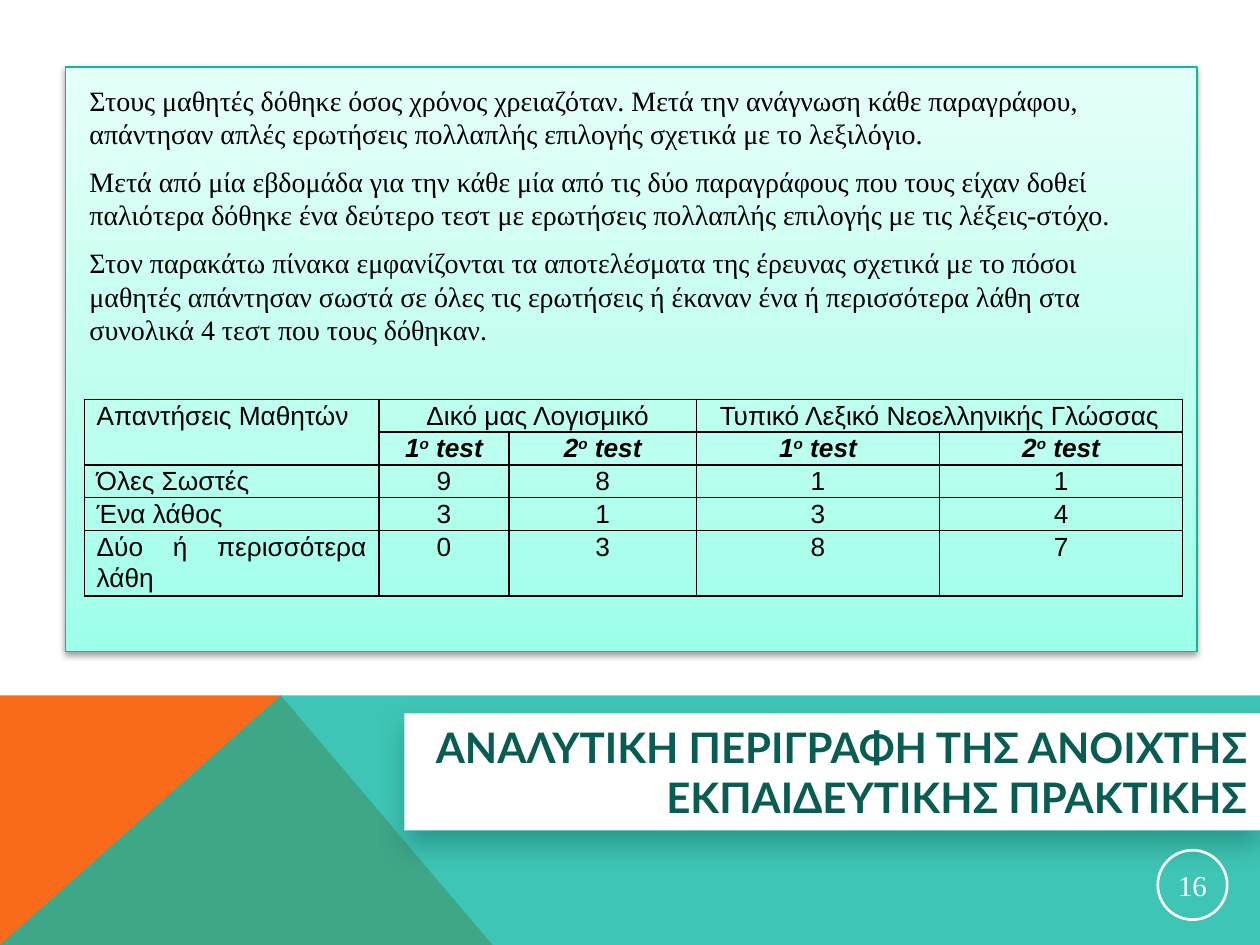
from lxml.etree import SubElement
from pptx import Presentation
from pptx.dml.color import RGBColor
from pptx.enum.shapes import MSO_SHAPE
from pptx.enum.text import MSO_ANCHOR, MSO_AUTO_SIZE, PP_ALIGN
from pptx.oxml.ns import qn
from pptx.util import Cm, Pt

WHITE = RGBColor(0xFF, 0xFF, 0xFF)
BLACK = RGBColor(0, 0, 0)
ORANGE = RGBColor(0xF9, 0x6A, 0x1B)
TEAL = RGBColor(0x10, 0xB7, 0xA3)
PANEL_EDGE = RGBColor(0x0C, 0xB7, 0xA3)
DARK_TEAL = RGBColor(0x08, 0x5C, 0x52)
PANEL_STOPS = [
    (0, RGBColor(0x9D, 0xFF, 0xEA)),
    (35, RGBColor(0xBA, 0xFF, 0xEF)),
    (100, RGBColor(0xE5, 0xFF, 0xF9)),
]

HEADING = "ΑΝΑΛΥΤΙΚΗ ΠΕΡΙΓΡΑΦΗ ΤΗΣ ΑΝΟΙΧΤΗΣ ΕΚΠΑΙΔΕΥΤΙΚΗΣ ΠΡΑΚΤΙΚΗΣ"
PAGE_NUMBER = "16"
PROCEDURE = [
    "Στους μαθητές δόθηκε όσος χρόνος χρειαζόταν. Μετά την ανάγνωση κάθε παραγράφου, "
    "απάντησαν απλές ερωτήσεις πολλαπλής επιλογής σχετικά με το λεξιλόγιο.",
    "Μετά από μία εβδομάδα για την κάθε μία από τις δύο παραγράφους που τους είχαν δοθεί "
    "παλιότερα δόθηκε ένα δεύτερο τεστ με ερωτήσεις πολλαπλής επιλογής με τις λέξεις-στόχο.",
    "Στον παρακάτω πίνακα εμφανίζονται τα αποτελέσματα της έρευνας σχετικά με το πόσοι "
    "μαθητές απάντησαν σωστά σε όλες τις ερωτήσεις ή έκαναν ένα ή περισσότερα λάθη στα "
    "συνολικά 4 τεστ που τους δόθηκαν.",
]
TEST_ROW = 1
RESULTS = [
    ["Απαντήσεις Μαθητών", "Δικό μας Λογισμικό", "", "Τυπικό Λεξικό Νεοελληνικής Γλώσσας", ""],
    ["", "1", "2", "1", "2"],
    ["Όλες Σωστές", "9", "8", "1", "1"],
    ["Ένα λάθος", "3", "1", "3", "4"],
    ["Δύο ή περισσότερα λάθη", "0", "3", "8", "7"],
]
MERGES = [((0, 0), (1, 0)), ((0, 1), (0, 2)), ((0, 3), (0, 4))]
COLUMN_WIDTHS = [5.94, 2.62, 3.78, 4.9, 4.9]
ROW_HEIGHTS = [0.66, 0.66, 0.66, 0.66, 1.32]

WIDTH, HEIGHT = 25.4, 19.05
BAND_TOP, PEAK = 14.02, 5.66
BAND_SHAPES = [
    (ORANGE, 100, [(0, HEIGHT), (0, BAND_TOP), (PEAK, BAND_TOP), (9.93, HEIGHT)]),
    (TEAL, 80, [(0, HEIGHT), (PEAK, BAND_TOP), (WIDTH, BAND_TOP), (WIDTH, HEIGHT)]),
]


def add_color(parent, color, alpha=100):
    srgb = SubElement(parent, qn("a:srgbClr"), val=str(color))
    if alpha < 100:
        SubElement(srgb, qn("a:alpha"), val=str(alpha * 1000))


def cast_shadow(shape, color, alpha, blur, distance):
    shape.shadow.inherit = False
    effects = shape._element.spPr.find(qn("a:effectLst"))
    outer = SubElement(effects, qn("a:outerShdw"), blurRad=str(Pt(blur)),
                       dist=str(Pt(distance)), dir="5400000", rotWithShape="0")
    add_color(outer, color, alpha)


def place(shape, left, top, width, height):
    shape.left, shape.top = Cm(left), Cm(top)
    shape.width, shape.height = Cm(width), Cm(height)


def style_font(paragraph, name, size, color):
    paragraph.font.name = name
    paragraph.font.size = Pt(size)
    paragraph.font.color.rgb = color


def add_band(slide):
    for color, alpha, corners in BAND_SHAPES:
        points = [(Cm(x), Cm(y)) for x, y in corners]
        builder = slide.shapes.build_freeform(*points[0])
        builder.add_line_segments(points[1:], close=True)
        band = builder.convert_to_shape()
        band.shadow.inherit = False
        band.fill.solid()
        band.fill.fore_color.rgb = color
        band.line.fill.background()
        if alpha < 100:
            srgb = band._element.spPr.find(qn("a:solidFill")).find(qn("a:srgbClr"))
            SubElement(srgb, qn("a:alpha"), val=str(alpha * 1000))


def add_panel(slide):
    panel = slide.shapes.add_shape(MSO_SHAPE.RECTANGLE, Cm(1.32), Cm(1.35), Cm(22.81), Cm(11.79))
    panel.fill.gradient()
    panel.fill.gradient_angle = 90
    stops = panel._element.spPr.find(qn("a:gradFill")).find(qn("a:gsLst"))
    for stop in list(stops):
        stops.remove(stop)
    for position, color in PANEL_STOPS:
        add_color(SubElement(stops, qn("a:gs"), pos=str(position * 1000)), color)
    panel.line.color.rgb = PANEL_EDGE
    panel.line.width = Pt(0.75)
    cast_shadow(panel, BLACK, 38, 3.1, 1.6)


def fill_heading(heading):
    place(heading, 8.15, 14.38, 17.25, 2.36)
    heading.fill.solid()
    heading.fill.fore_color.rgb = WHITE
    cast_shadow(heading, DARK_TEAL, 40, 16, 8)
    frame = heading.text_frame
    frame.text = HEADING
    frame.word_wrap = True
    frame.auto_size = MSO_AUTO_SIZE.NONE
    frame.vertical_anchor = MSO_ANCHOR.MIDDLE
    paragraph = frame.paragraphs[0]
    paragraph.alignment = PP_ALIGN.RIGHT
    style_font(paragraph, "Lato", 24, DARK_TEAL)
    paragraph.font.bold = True


def fill_procedure(procedure):
    place(procedure, 1.55, 1.55, 22.3, 11.48)
    frame = procedure.text_frame
    frame.text = "\n".join(PROCEDURE)
    frame.word_wrap = True
    frame.auto_size = MSO_AUTO_SIZE.NONE
    frame.vertical_anchor = MSO_ANCHOR.TOP
    for index, paragraph in enumerate(frame.paragraphs):
        properties = paragraph._p.get_or_add_pPr()
        properties.set("marL", "0")
        properties.set("indent", "0")
        SubElement(properties, qn("a:buNone"))
        paragraph.space_before = Pt(8 if index else 0)
        style_font(paragraph, "Times New Roman", 16, BLACK)


def add_page_number(slide):
    badge = slide.shapes.add_shape(MSO_SHAPE.OVAL, Cm(23.34), Cm(17.14), Cm(1.4), Cm(1.4))
    badge.shadow.inherit = False
    badge.fill.background()
    badge.line.color.rgb = WHITE
    badge.line.width = Pt(1.5)
    frame = badge.text_frame
    frame.margin_left = frame.margin_right = frame.margin_top = frame.margin_bottom = Cm(0.03)
    frame.vertical_anchor = MSO_ANCHOR.MIDDLE
    frame.text = PAGE_NUMBER
    frame.paragraphs[0].alignment = PP_ALIGN.CENTER
    style_font(frame.paragraphs[0], "Times New Roman", 16.5, WHITE)


def fill_cell(cell, text, row, column):
    cell.margin_left = cell.margin_right = Cm(0.25)
    cell.margin_top = cell.margin_bottom = 0
    for side in ("lnL", "lnR", "lnT", "lnB"):
        border = SubElement(cell._tc.get_or_add_tcPr(), qn(f"a:{side}"), w=str(Pt(1)))
        add_color(SubElement(border, qn("a:solidFill")), BLACK)
    cell.fill.background()
    paragraph = cell.text_frame.paragraphs[0]
    paragraph.alignment = PP_ALIGN.CENTER if column else PP_ALIGN.JUSTIFY
    paragraph.line_spacing = 1.07
    style_font(paragraph, "Arial", 15, BLACK)
    if text:
        paragraph.add_run().text = text
    if text and row == TEST_ROW:
        ordinal = paragraph.add_run()
        ordinal.text = "ο"
        ordinal.font._element.set("baseline", "30000")
        paragraph.add_run().text = " test"
        paragraph.font.bold = paragraph.font.italic = True


def add_results(slide):
    results = slide.shapes.add_table(
        len(RESULTS), len(COLUMN_WIDTHS), Cm(1.7), Cm(8.05),
        Cm(sum(COLUMN_WIDTHS)), Cm(sum(ROW_HEIGHTS))).table
    results.first_row = results.horz_banding = False
    for column, width in zip(results.columns, COLUMN_WIDTHS):
        column.width = Cm(width)
    for row, height in zip(results.rows, ROW_HEIGHTS):
        row.height = Cm(height)
    for row, texts in enumerate(RESULTS):
        for column, text in enumerate(texts):
            fill_cell(results.cell(row, column), text, row, column)
    for first, last in MERGES:
        results.cell(*first).merge(results.cell(*last))


def main():
    deck = Presentation()
    deck.slide_width, deck.slide_height = Cm(WIDTH), Cm(HEIGHT)
    slide = deck.slides.add_slide(deck.slide_layouts[1])
    heading, procedure = slide.placeholders
    add_band(slide)
    add_panel(slide)
    for placeholder in (heading, procedure):
        slide.shapes._spTree.append(placeholder._element)
    fill_heading(heading)
    fill_procedure(procedure)
    add_page_number(slide)
    add_results(slide)
    deck.save("out.pptx")


if __name__ == "__main__":
    main()
